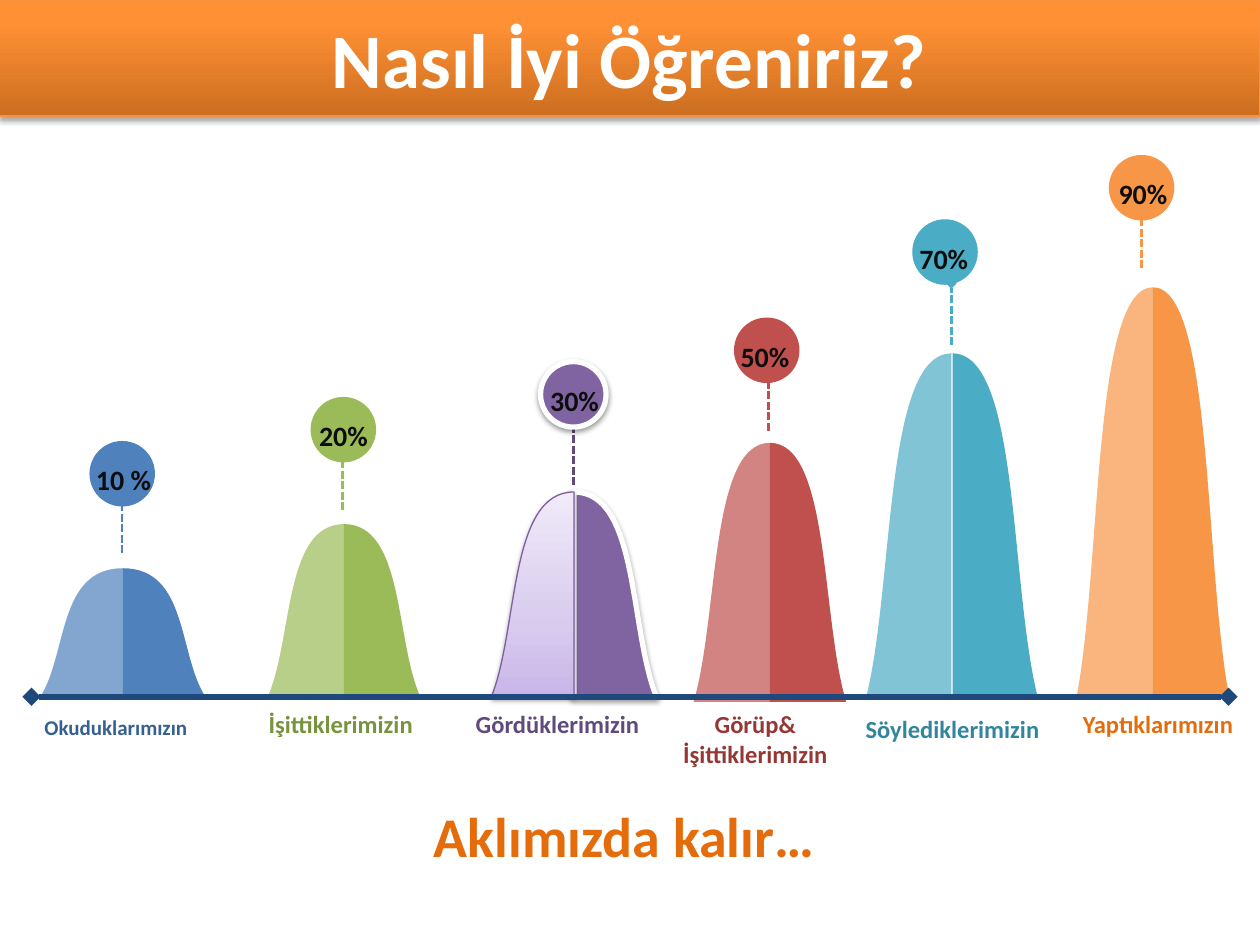
from dataclasses import dataclass
from typing import Optional
from lxml.etree import SubElement
from pptx import Presentation
from pptx.dml.color import RGBColor
from pptx.enum.dml import MSO_LINE
from pptx.enum.shapes import MSO_CONNECTOR, MSO_SHAPE
from pptx.enum.text import MSO_ANCHOR, MSO_AUTO_SIZE, PP_ALIGN
from pptx.oxml.ns import qn
from pptx.util import Inches, Pt

COLS, ROWS = 100, 75
BASE, BALL, STEM = 55.3, 5.2, 4.9
WHITE = RGBColor(0xFF, 0xFF, 0xFF)
INK = RGBColor(0x0D, 0x0D, 0x0D)
NAVY = RGBColor(0x1F, 0x49, 0x7D)
BLUE, BLUE_DARK = RGBColor(0x4F, 0x81, 0xBD), RGBColor(0x37, 0x60, 0x92)
GREEN, GREEN_DARK = RGBColor(0x9B, 0xBB, 0x59), RGBColor(0x77, 0x93, 0x3C)
PURPLE, PURPLE_DARK = RGBColor(0x80, 0x64, 0xA2), RGBColor(0x60, 0x4A, 0x7B)
PURPLE_EDGE = RGBColor(0x7D, 0x60, 0xA0)
RED, RED_DARK = RGBColor(0xC0, 0x50, 0x4D), RGBColor(0x95, 0x37, 0x35)
TEAL, TEAL_DARK = RGBColor(0x4B, 0xAC, 0xC6), RGBColor(0x31, 0x85, 0x9C)
ORANGE, ORANGE_DARK = RGBColor(0xF7, 0x96, 0x46), RGBColor(0xE4, 0x6C, 0x0A)
ORANGE_EDGE = RGBColor(0xF6, 0x92, 0x40)
LILAC_STOPS = [(0, "C9B5E8"), (35, "D8CBEE"), (100, "F0EAF9")]
TITLE_STOPS = [(0, "CC6E20"), (80, "FF9034"), (100, "FF9136")]


@dataclass
class Hill:
    percent: str
    label: str
    color: RGBColor
    dark: RGBColor
    center: float
    top: float
    half: float
    ball_x: float
    ball_top: float
    stem_x: float
    stem_foot: float
    percent_x: float
    label_x: float
    label_width: float
    label_top: float = 55.8
    label_size: int = 14
    label_wrap: bool = False
    percent_width: float = 5.9
    base: float = BASE
    gap: float = 0
    raised: bool = False


HILLS = [
    Hill("10 %", "Okuduklarımızın", BLUE, BLUE_DARK, 9.75, 45.1, 6.55, 9.7, 35, 9.7, 43.9,
         9.8, 9.2, 20.5, label_top=56.2, label_size=12, label_wrap=True, percent_width=6.4),
    Hill("20%", "İşittiklerimizin", GREEN, GREEN_DARK, 27.3, 41.6, 6.05, 27.25, 31.5, 27.2, 40.5,
         27.25, 27.05, 13.7),
    Hill("30%", "Gördüklerimizin", PURPLE, PURPLE_DARK, 45.55, 39.05, 6.55, 45.5, 28.7, 45.5, 38.5,
         45.6, 44.25, 15.1, raised=True),
    Hill("50%", "Görüp&\nİşittiklerimizin", RED, RED_DARK, 61.1, 35.15, 6.05, 60.85, 25.2, 61, 34.2,
         60.7, 59.95, 13.7, base=55.7),
    Hill("70%", "Söylediklerimizin", TEAL, TEAL_DARK, 75.5, 28.05, 6.75, 75, 17.4, 75.5, 27.4,
         74.9, 75.6, 16, label_top=56.2, gap=0.1),
    Hill("90%", "Yaptıklarımızın", ORANGE, ORANGE_DARK, 91.5, 22.8, 6.05, 90.6, 12.3, 90.6, 21.3,
         90.7, 91.9, 14.1),
]

prs = Presentation()
prs.slide_width, prs.slide_height = Inches(10), Inches(7.5)
s = prs.slides.add_slide(prs.slide_layouts[6])


def col(n: float) -> int:
    return round(prs.slide_width * n / COLS)


def row(n: float) -> int:
    return round(prs.slide_height * n / ROWS)


def style(sp, fill: Optional[RGBColor] = None, stops=None, alpha: int = 100,
          line: Optional[RGBColor] = None, width: float = 0.75,
          shadow: int = 0, distance: float = 1.6) -> None:
    if stops:
        sp.fill.gradient()
        sp.fill.gradient_angle = 90
        gs_list = sp._element.spPr.find(qn("a:gradFill")).find(qn("a:gsLst"))
        for gs in list(gs_list):
            gs_list.remove(gs)
        for pos, color in stops:
            gs = SubElement(gs_list, qn("a:gs"), pos=str(pos * 1000))
            SubElement(gs, qn("a:srgbClr"), val=color)
    else:
        sp.fill.solid()
        sp.fill.fore_color.rgb = fill
        if alpha < 100:
            clr = sp._element.spPr.find(qn("a:solidFill"))[0]
            SubElement(clr, qn("a:alpha"), val=str(alpha * 1000))
    if line is None:
        sp.line.fill.background()
    else:
        sp.line.color.rgb = line
        sp.line.width = Pt(width)
    sp.shadow.inherit = False
    if shadow:
        effects = sp._element.spPr.find(qn("a:effectLst"))
        outer = SubElement(effects, qn("a:outerShdw"), blurRad=str(Pt(3.1)),
                           dist=str(Pt(distance)), dir="5400000", rotWithShape="0")
        clr = SubElement(outer, qn("a:srgbClr"), val="000000")
        SubElement(clr, qn("a:alpha"), val=str(shadow * 1000))


def write(tf, text: str, size: float, color: RGBColor, wrap: bool = False,
          anchor=MSO_ANCHOR.TOP, grow: bool = False) -> None:
    tf.word_wrap = wrap
    tf.vertical_anchor = anchor
    if grow:
        tf.auto_size = MSO_AUTO_SIZE.SHAPE_TO_FIT_TEXT
    for i, words in enumerate(text.split("\n")):
        p = tf.add_paragraph() if i else tf.paragraphs[0]
        p.alignment = PP_ALIGN.CENTER
        r = p.add_run()
        r.text = words
        r.font.name, r.font.size, r.font.bold = "Calibri", Pt(size), True
        r.font.color.rgb = color


def add_label(text: str, x: float, top: float, width: float, height: float,
              size: float, color: RGBColor, wrap: bool = False) -> None:
    tb = s.shapes.add_textbox(col(x - width / 2), row(top), col(width), row(height))
    write(tb.text_frame, text, size, color, wrap, grow=True)


def add_line(x1: float, y1: float, x2: float, y2: float, color: RGBColor,
             width: float, ends: tuple, dashed: bool = False) -> None:
    c = s.shapes.add_connector(MSO_CONNECTOR.STRAIGHT, col(x1), row(y1), col(x2), row(y2))
    c.line.color.rgb, c.line.width = color, Pt(width)
    if dashed:
        c.line.dash_style = MSO_LINE.SQUARE_DOT
    for end in ends:
        SubElement(c.line._get_or_add_ln(), qn("a:" + end), type="diamond")
    SubElement(c._element.spPr, qn("a:effectLst"))


def add_half(shapes, h: Hill, side: int):
    middle = h.center + (h.gap if side > 0 else 0)
    peak = (col(middle), row(h.top))
    fb = shapes.build_freeform(*peak)
    fb.add_line_segments([(col(middle), row(h.base)),
                          (col(middle + side * h.half), row(h.base)), peak], close=True)
    sp = fb.convert_to_shape()
    slope = list(sp._element.spPr.iter(qn("a:lnTo")))[-1]
    curve = slope.makeelement(qn("a:cubicBezTo"))
    for out, down in ((0.67, 0.67), (0.79, 0), (0, 0)):
        x = out if side > 0 else 1 - out
        SubElement(curve, qn("a:pt"), x=str(round(sp.width * x)), y=str(round(sp.height * down)))
    slope.getparent().replace(slope, curve)
    return sp


def add_hill(h: Hill) -> None:
    stem_color = h.dark if h.raised else h.color
    add_line(h.stem_x, h.stem_foot, h.stem_x, h.stem_foot - STEM,
             stem_color, 1.5, ("tailEnd",), dashed=True)
    rim = dict(line=WHITE, width=3, shadow=38) if h.raised else {}
    ball = s.shapes.add_shape(MSO_SHAPE.OVAL, col(h.ball_x - BALL / 2),
                              row(h.ball_top), col(BALL), row(BALL))
    style(ball, h.color, **rim)
    halves = s.shapes.add_group_shape().shapes
    style(add_half(halves, h, 1), h.color, **rim)
    left = add_half(halves, h, -1)
    if h.raised:
        style(left, stops=LILAC_STOPS, line=PURPLE_EDGE, shadow=38)
    else:
        style(left, h.color, alpha=70)
    lines = h.label.count("\n") + 1
    add_label(h.label, h.label_x, h.label_top, h.label_width,
              1 + lines * h.label_size / 6, h.label_size, h.dark, h.label_wrap)
    add_label(h.percent, h.percent_x, h.ball_top + 1.25, h.percent_width, 3.7, 16, INK)


for hill in HILLS:
    add_hill(hill)
add_line(2.5, BASE, 97.5, BASE, NAVY, 3.5, ("headEnd", "tailEnd"))

title = s.shapes.add_shape(MSO_SHAPE.RECTANGLE, col(-0.1), 0, col(COLS + 0.1), row(9.2))
style(title, stops=TITLE_STOPS, line=ORANGE_EDGE, shadow=35, distance=1.8)
write(title.text_frame, "Nasıl İyi Öğreniriz?", 44, WHITE, True, MSO_ANCHOR.MIDDLE)
add_label("Aklımızda kalır…", 49.55, 63.1, 53.1, 6.4, 32, ORANGE_DARK, wrap=True)

prs.save("out.pptx")
